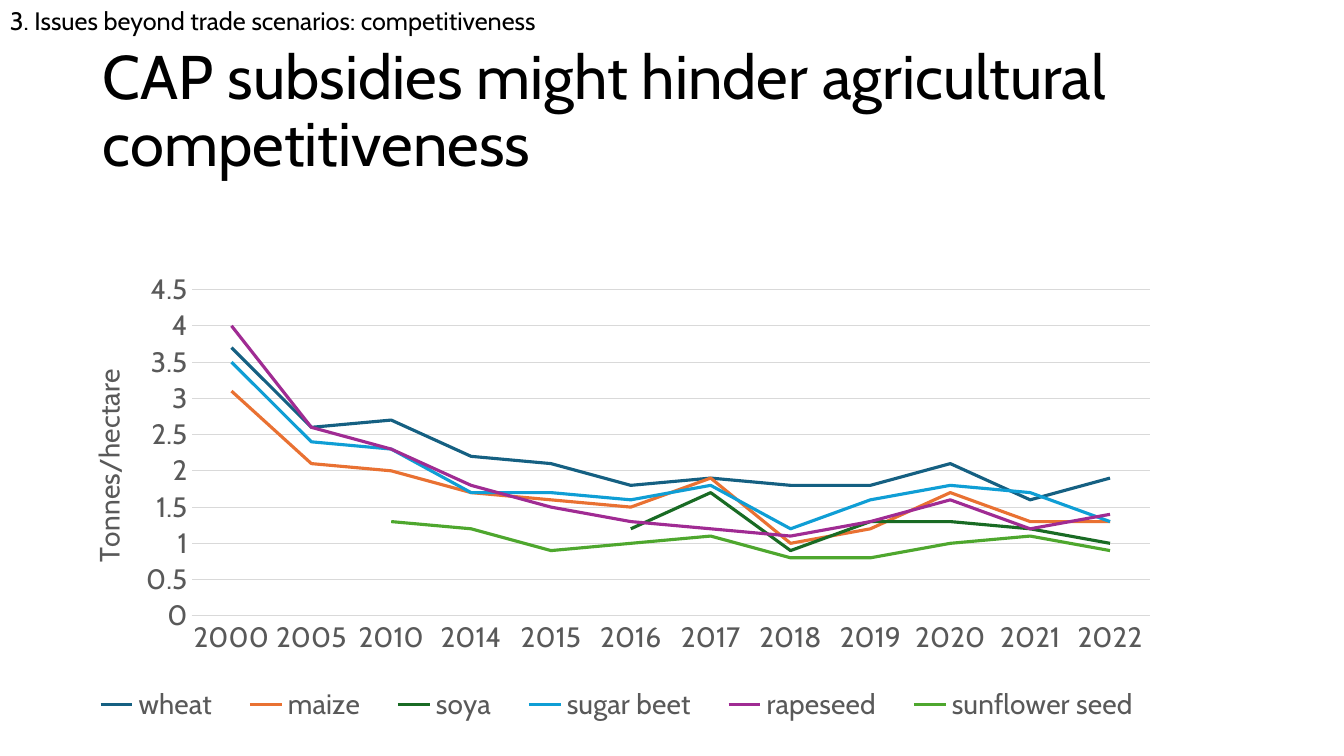
import pptx
import pptx.chart.data
import pptx.dml.color
import pptx.enum.chart
import pptx.enum.text
import pptx.oxml
import pptx.oxml.ns
import pptx.util

PX = 914400 / 100.8
FONT = "Cabin"
GREY = "595959"
RULE = "D9D9D9"
YEARS = ["2000", "2005", "2010", "2014", "2015", "2016",
         "2017", "2018", "2019", "2020", "2021", "2022"]
CROPS = [
    ("wheat", "156082", [3.7, 2.6, 2.7, 2.2, 2.1, 1.8, 1.9, 1.8, 1.8, 2.1, 1.6, 1.9]),
    ("maize", "E97132", [3.1, 2.1, 2, 1.7, 1.6, 1.5, 1.9, 1, 1.2, 1.7, 1.3, 1.3]),
    ("soya", "196B24", [None] * 5 + [1.2, 1.7, 0.9, 1.3, 1.3, 1.2, 1]),
    ("sugar beet", "0F9ED5", [3.5, 2.4, 2.3, 1.7, 1.7, 1.6, 1.8, 1.2, 1.6, 1.8, 1.7, 1.3]),
    ("rapeseed", "A02B93", [4, 2.6, 2.3, 1.8, 1.5, 1.3, 1.2, 1.1, 1.3, 1.6, 1.2, 1.4]),
    ("sunflower seed", "4EA72E", [None] * 2 + [1.3, 1.2, 0.9, 1, 1.1, 0.8, 0.8, 1, 1.1, 0.9]),
]


def px(length):
    return pptx.util.Emu(round(length * PX))


def color(value):
    return pptx.dml.color.RGBColor.from_string(value)


def apply(target, values):
    for name, value in values.items():
        setattr(target, name, value)


def style_font(font, size, value):
    apply(font, {"name": FONT, "size": pptx.util.Pt(size), "bold": False})
    font.color.rgb = color(value)


def style_line(line, value, width):
    line.color.rgb = color(value)
    line.width = pptx.util.Pt(width)


def set_layout(parent, previous, fractions, inner=False):
    for old in parent.findall(pptx.oxml.ns.qn("c:layout")):
        parent.remove(old)
    target = '<c:layoutTarget val="inner"/>' if inner else ""
    modes = "".join(f'<c:{axis}Mode val="edge"/>' for axis in "xy")
    sizes = "".join(f'<c:{axis} val="{value}"/>' for axis, value in zip("xywh", fractions))
    layout = pptx.oxml.parse_xml(
        f'<c:layout {pptx.oxml.ns.nsdecls("c")}><c:manualLayout>'
        f'{target}{modes}{sizes}</c:manualLayout></c:layout>')
    if previous:
        parent.find(pptx.oxml.ns.qn(previous)).addnext(layout)
    else:
        parent.insert(0, layout)


def add_text(slide, box, text, size, anchor, spacing):
    shape = slide.shapes.add_textbox(*map(px, box))
    apply(shape.text_frame, {"word_wrap": True, "vertical_anchor": anchor})
    paragraph = shape.text_frame.paragraphs[0]
    paragraph.line_spacing = spacing
    run = paragraph.add_run()
    run.text = text
    style_font(run.font, size, "000000")


def style_axes(chart):
    none = pptx.enum.chart.XL_TICK_MARK.NONE
    for axis in (chart.category_axis, chart.value_axis):
        apply(axis, {"major_tick_mark": none, "minor_tick_mark": none})
        style_font(axis.tick_labels.font, 20, GREY)
    style_line(chart.category_axis.format.line, RULE, 0.75)
    axis = chart.value_axis
    apply(axis, {"minimum_scale": 0, "maximum_scale": 4.5, "major_unit": 0.5,
                 "has_major_gridlines": True})
    axis.format.line.fill.background()
    style_line(axis.major_gridlines.format.line, RULE, 0.75)
    title = axis.axis_title
    title.text_frame.text = "Tonnes/hectare"
    style_font(title.text_frame.paragraphs[0].runs[0].font, 20, GREY)
    properties = title.text_frame._txBody.bodyPr
    properties.set("rot", "-5400000")
    properties.set("vert", "horz")
    set_layout(title._element, "c:tx", (0.03, 0.2))


def add_yield_chart(slide, box):
    data = pptx.chart.data.CategoryChartData(number_format="General")
    data.categories = YEARS
    for name, _, values in CROPS:
        data.add_series(name, values)
    chart = slide.shapes.add_chart(
        pptx.enum.chart.XL_CHART_TYPE.LINE, *map(px, box), data).chart
    style_font(chart.font, 20, "000000")
    apply(chart, {"has_title": False, "has_legend": True})
    chart.plots[0].vary_by_categories = False
    for series, (_, value, _) in zip(chart.plots[0].series, CROPS):
        series.smooth = False
        series.marker.style = pptx.enum.chart.XL_MARKER_STYLE.NONE
        style_line(series.format.line, value, 2.25)
    style_axes(chart)
    legend = chart.legend
    apply(legend, {"position": pptx.enum.chart.XL_LEGEND_POSITION.BOTTOM,
                   "include_in_layout": False})
    style_font(legend.font, 20, GREY)
    set_layout(legend._element, "c:legendPos", (0.02, 0.86, 0.94, 0.1))
    plot_area = chart._chartSpace.chart.plotArea
    set_layout(plot_area, None, (0.123, 0.045, 0.827, 0.68), inner=True)


def build_slide(presentation):
    slide = presentation.slides.add_slide(presentation.slide_layouts[6])
    anchors = pptx.enum.text.MSO_ANCHOR
    add_text(slide, (93, 40, 1159, 146),
             "CAP subsidies might hinder agricultural competitiveness",
             44, anchors.MIDDLE, 0.9)
    add_yield_chart(slide, (49, 268, 1159, 480))
    add_text(slide, (0, 0, 671, 40),
             "3. Issues beyond trade scenarios: competitiveness",
             18, anchors.TOP, 1.0)


def main():
    presentation = pptx.Presentation()
    apply(presentation, {"slide_width": px(1344), "slide_height": px(756)})
    build_slide(presentation)
    presentation.save("out.pptx")


if __name__ == "__main__":
    main()
